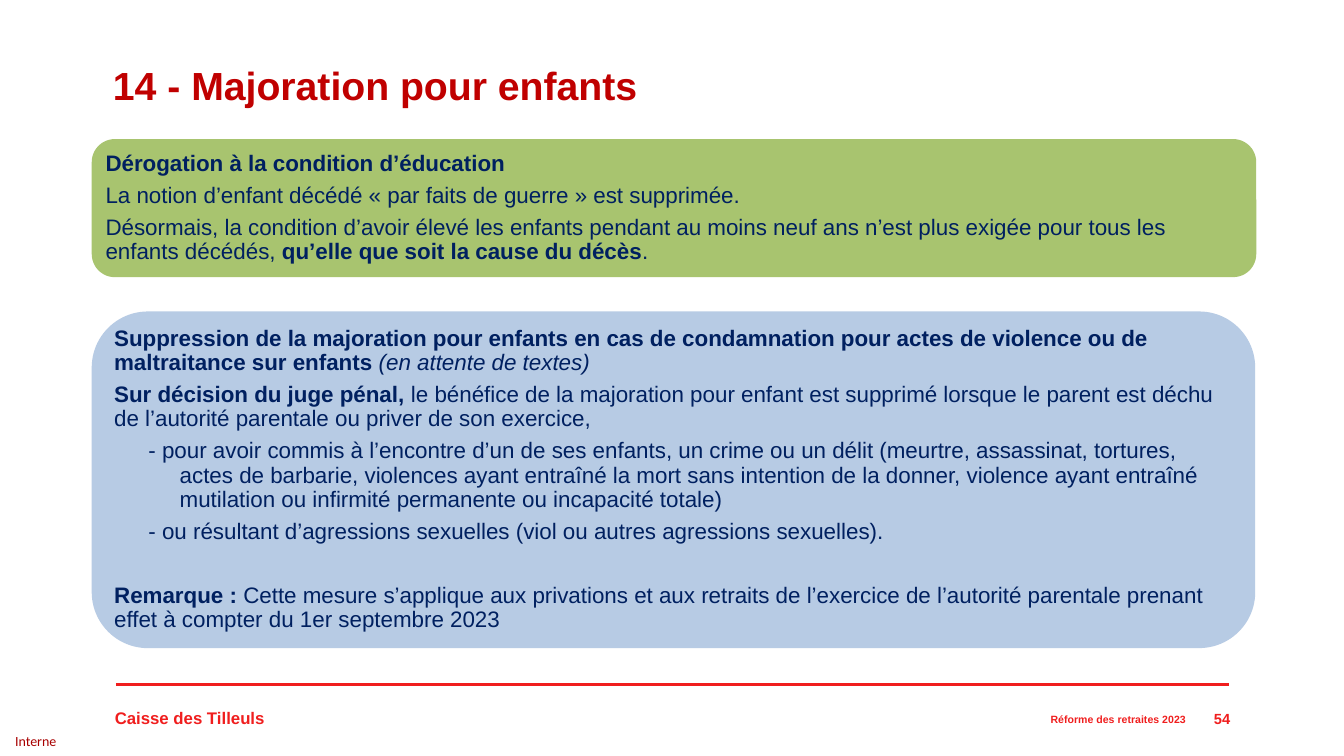
"""Build the slide on the pension supplement for children."""
import lxml.etree
import pptx
import pptx.dml.color
import pptx.enum.shapes
import pptx.enum.text
import pptx.oxml.ns
import pptx.util

PX = 9144
RED, NAVY, DARK = "F01E1E", "002060", "C00000"
LEFT = pptx.enum.text.PP_ALIGN.LEFT
RIGHT = pptx.enum.text.PP_ALIGN.RIGHT
MIDDLE = pptx.enum.text.MSO_ANCHOR.MIDDLE

RELIEF = [
    {"runs": [("Dérogation à la condition d’éducation", "b")]},
    {"runs": [("La notion d’enfant décédé « par faits de guerre » est supprimée.", "")]},
    {"runs": [("Désormais, la condition d’avoir élevé les enfants pendant au moins "
               "neuf ans n’est plus exigée pour tous les enfants décédés, ", ""),
              ("qu’elle que soit la cause du décès", "b"), (".", "")]},
]
LOSS = [
    {"runs": [("Suppression de la majoration pour enfants en cas de condamnation pour "
               "actes de violence ou de maltraitance sur enfants ", "b"),
              ("(en attente de textes)", "i")]},
    {"runs": [("Sur décision du juge pénal, ", "b"),
              ("le bénéfice de la majoration pour enfant est supprimé lorsque le parent "
               "est déchu de l’autorité parentale ou priver de son exercice,", "")]},
    {"runs": [("- pour avoir commis à l’encontre d’un de ses enfants, un crime ou un "
               "délit (meurtre, assassinat, tortures, actes de barbarie, violences ayant "
               "entraîné la mort sans intention de la donner, violence ayant entraîné "
               "mutilation ou infirmité permanente ou incapacité totale)", "")],
     "dash": True},
    {"runs": [("- ou résultant d’agressions sexuelles (viol ou autres agressions "
               "sexuelles).", "")], "dash": True},
    {"runs": [("Remarque : ", "b"),
              ("Cette mesure s’applique aux privations et aux retraits de l’exercice de "
               "l’autorité parentale prenant effet à compter du 1er septembre 2023", "")],
     "gap": 23},
]


def px(*nums):
    """Turn pixel lengths into EMU."""
    return [pptx.util.Emu(num * PX) for num in nums]


def color(code):
    """Return the colour of a hex string."""
    return pptx.dml.color.RGBColor.from_string(code)


def style(font, size, code, bold=None, name="Arial"):
    """Set size, colour, weight and typeface of a font."""
    font.name, font.size, font.bold = name, pptx.util.Pt(size), bold
    font.color.rgb = color(code)


def inset(frame, side, top):
    """Set the inner margins of a text frame."""
    frame.margin_left = frame.margin_right = px(side)[0]
    frame.margin_top = frame.margin_bottom = px(top)[0]


def head(slide, text):
    """Place and format the slide title."""
    title = slide.shapes.title
    title.left, title.top, title.width, title.height = px(102, 62, 1142, 51)
    frame = title.text_frame
    frame.text = text
    frame.auto_size = pptx.enum.text.MSO_AUTO_SIZE.NONE
    frame.vertical_anchor = MIDDLE
    para = frame.paragraphs[0]
    para.alignment, para.line_spacing = LEFT, 0.9
    style(para.font, 28, DARK, True)


def panel(slide, area, fill, pad, items):
    """Draw a rounded panel holding rich paragraphs."""
    kind = pptx.enum.shapes.MSO_SHAPE.ROUNDED_RECTANGLE
    shape = slide.shapes.add_shape(kind, *px(*area))
    shape.shadow.inherit = False
    shape.fill.solid()
    shape.fill.fore_color.rgb = color(fill)
    shape.line.fill.background()
    frame = shape.text_frame
    frame.word_wrap, frame.vertical_anchor = True, MIDDLE
    inset(frame, pad, pad)
    for num, item in enumerate(items):
        para = frame.add_paragraph() if num else frame.paragraphs[0]
        para.alignment, para.line_spacing = LEFT, 0.9
        para.space_before = pptx.util.Pt(item.get("gap", 0))
        para.space_after = pptx.util.Pt(5.6)
        style(para.font, 16, NAVY)
        if item.get("dash"):
            props = para._p.get_or_add_pPr()
            props.set("marL", str(65 * PX))
            props.set("indent", str(-31 * PX))
        for text, mark in item["runs"]:
            run = para.add_run()
            run.text = text
            run.font.bold, run.font.italic = mark == "b", mark == "i"


def label(slide, area, text, size, code=RED, align=LEFT, bold=True, name="Arial", pad=10):
    """Add one line of footer text."""
    frame = slide.shapes.add_textbox(*px(*area)).text_frame
    frame.word_wrap, frame.vertical_anchor = True, MIDDLE
    inset(frame, pad, pad // 2)
    para = frame.paragraphs[0]
    para.text, para.alignment = text, align
    style(para.font, size, code, bold, name)


def rule(slide, ends):
    """Draw the red line above the footer."""
    kind = pptx.enum.shapes.MSO_CONNECTOR.STRAIGHT
    line = slide.shapes.add_connector(kind, *px(*ends))
    line.line.color.rgb = color(RED)
    line.line.width = pptx.util.Pt(2)
    props = line._element.spPr
    lxml.etree.SubElement(props, pptx.oxml.ns.qn("a:effectLst"))


def main():
    """Build and save the slide."""
    deck = pptx.Presentation()
    deck.slide_width, deck.slide_height = px(1333, 750)
    slide = deck.slides.add_slide(deck.slide_layouts.get_by_name("Title Only"))
    rule(slide, (115, 679, 1219, 679))
    label(slide, (104, 697, 190, 30), "Caisse des Tilleuls", 12)
    label(slide, (15, 721, 56, 29), "Interne", 10, "A80000",
          bold=False, name="Calibri", pad=0)
    head(slide, "14 - Majoration pour enfants")
    panel(slide, (91, 138, 1155, 137), "A8C46F", 7, RELIEF)
    panel(slide, (91, 309, 1154, 334), "B7CBE4", 6, LOSS)
    label(slide, (792, 700, 394, 28), "Réforme des retraites 2023", 7.5, align=RIGHT)
    label(slide, (1171, 697, 59, 31), "54", 10.5, align=RIGHT)
    deck.save("out.pptx")


if __name__ == "__main__":
    main()
